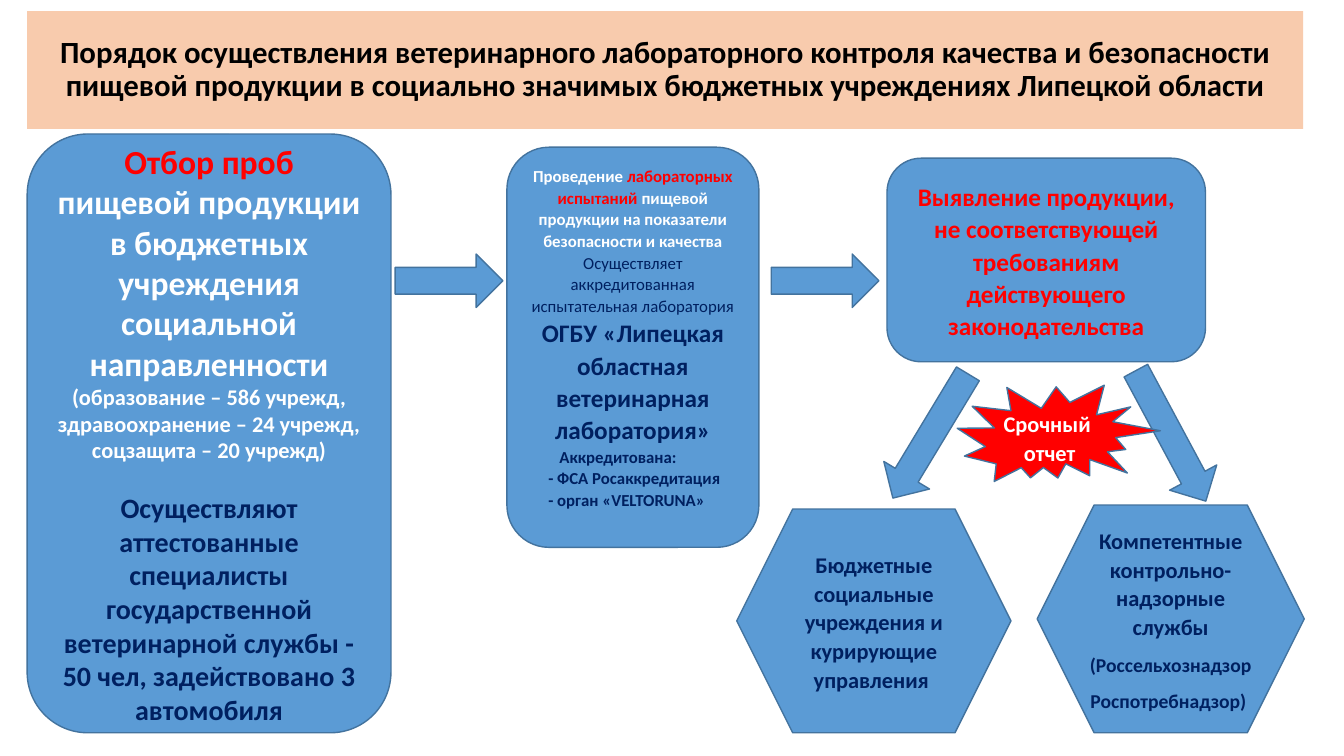
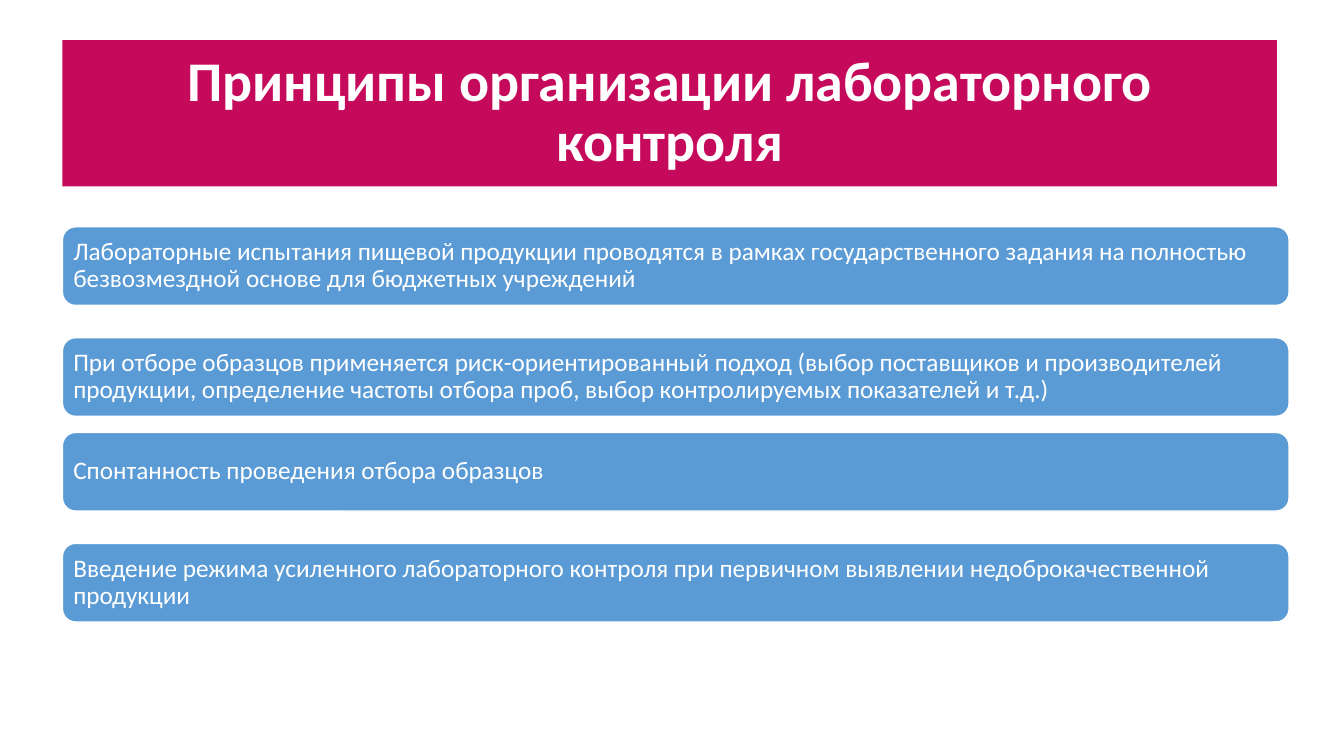
from pptx import Presentation
from pptx.util import Inches, Pt
from pptx.dml.color import RGBColor
from pptx.enum.shapes import MSO_SHAPE
from pptx.enum.text import MSO_ANCHOR, PP_ALIGN

RECT, ROUND = MSO_SHAPE.RECTANGLE, MSO_SHAPE.ROUNDED_RECTANGLE
ARROW, HEX, SEAL = MSO_SHAPE.RIGHT_ARROW, MSO_SHAPE.HEXAGON, MSO_SHAPE.EXPLOSION2
MID, LEFT, CENTER = MSO_ANCHOR.MIDDLE, PP_ALIGN.LEFT, PP_ALIGN.CENTER
BLUE, EDGE, NAVY, RED = "5B9BD5", "43739E", "002060", "FF0000"
WHITE, BLACK, PEACH, PINK = "FFFFFF", "000000", "F8CBAD", "C60A5B"
FONT = "Calibri"
PAGE = (0, 0, 13.33, 7.5)
INSET = (0.1, 0.05, 0.1, 0.05)


def color(code):
    return RGBColor.from_string(code)


def part(box, left, top, width, height):
    x, y, w, h = box
    return (x + w * left / 100, y + h * top / 100, w * width / 100, h * height / 100)


def run(text, size, ink=WHITE, bold=True):
    return text, size, ink, bold


def para(*runs, align=CENTER, line=1.07, before=0, after=0, indent=0):
    return runs, align, line, before, after, indent


def write(frame, paras, inset=INSET, wrap=True):
    frame.word_wrap = wrap
    frame.vertical_anchor = MID
    frame.margin_left, frame.margin_top, frame.margin_right, frame.margin_bottom = map(Inches, inset)
    for i, (runs, align, line, before, after, indent) in enumerate(paras):
        p = frame.paragraphs[0] if i == 0 else frame.add_paragraph()
        p.alignment, p.line_spacing = align, line
        p.space_before, p.space_after = Pt(before), Pt(after)
        if indent:
            p._p.get_or_add_pPr().set("marL", str(Inches(indent)))
        for text, size, ink, bold in runs:
            r = p.add_run()
            r.text = text
            r.font.name, r.font.size, r.font.bold = FONT, Pt(size), bold
            r.font.color.rgb = color(ink)


def draw(slide, kind, box, paras=(), fill=BLUE, edge=EDGE, turn=0, inset=INSET):
    shape = slide.shapes.add_shape(kind, *map(Inches, box))
    shape.shadow.inherit = False
    shape.rotation = turn
    shape.fill.solid()
    shape.fill.fore_color.rgb = color(fill)
    if edge:
        shape.line.color.rgb = color(edge)
        shape.line.width = Pt(1)
    else:
        shape.line.fill.background()
    write(shape.text_frame, paras, inset)


def title(slide, box, text, size, ink, fill):
    draw(slide, RECT, box, [para(run(text, size, ink), line=0.9)], fill, None)


def sample(slide, box):
    draw(slide, ROUND, box, [
        para(run("Отбор проб ", 24, RED),
             run("пищевой продукции в бюджетных учреждения социальной направленности", 24), line=1),
        para(run("(образование – 586 учрежд, здравоохранение – 24 учрежд,", 16), line=1),
        para(run("соцзащита – 20 учрежд)", 16), line=1),
        para(run("Осуществляют аттестованные специалисты государственной ветеринарной "
                 "службы - 50 чел, задействовано 3 автомобиля", 20, NAVY), line=1, before=19.5),
    ])


def trial(slide, box):
    draw(slide, ROUND, box, [
        para(run("Проведение ", 12), run("лабораторных испытаний ", 12, RED),
             run("пищевой продукции на показатели безопасности и качества", 12)),
        para(run("Осуществляет аккредитованная испытательная лаборатория ", 12, NAVY, False),
             run("ОГБУ «Липецкая областная ветеринарная лаборатория»", 18, NAVY)),
        para(run("Аккредитована:", 12, NAVY), align=LEFT, indent=0.3),
        para(run("- ФСА Росаккредитация", 12, NAVY), align=LEFT, indent=0.19),
        para(run("- орган «VELTORUNA»", 12, NAVY), align=LEFT, indent=0.19),
    ], inset=(0.1, 0.05, 0.1, 0.25))


def report(slide, box):
    draw(slide, ROUND, part(box, 26.48, 0, 56.13, 35.43), [
        para(run("Выявление продукции, не соответствующей требованиям действующего "
                 "законодательства", 18, RED), before=10, after=8)])
    draw(slide, ARROW, part(box, 21.32, 43.68, 25.58, 9.3), turn=121.1)
    draw(slide, HEX, part(box, 0, 61.05, 48.32, 38.95), [
        para(run("Бюджетные социальные учреждения и курирующие управления ", 16, NAVY), after=8)])
    draw(slide, HEX, part(box, 52.94, 60.36, 47.06, 39.64), [
        para(run(text, size, NAVY), after=8) for text, size in (
            ("Компетентные контрольно-надзорные службы", 16),
            ("(Россельхознадзор", 14),
            ("Роспотребнадзор) ", 14))])
    draw(slide, ARROW, part(box, 63.43, 43.68, 26.1, 9.3), turn=61.8)
    draw(slide, SEAL, part(box, 38.92, 38.25, 35.34, 19.83), fill=RED, turn=10)
    label = slide.shapes.add_textbox(*map(Inches, part(box, 45.12, 42.63, 20.06, 11.93)))
    write(label.text_frame, [para(run(text, 16)) for text in ("Срочный ", "отчет")], wrap=False)


def rules(slide, box, items):
    for i, text in enumerate(items):
        top = i // 2 * 52.04 + i % 2 * 28.07
        draw(slide, ROUND, part(box, 0, top, 100, 19.9),
             [para(run(text, 18, bold=False), align=LEFT, line=0.9)],
             edge=WHITE, inset=(0.07,) * 4)


def order(slide):
    title(slide, part(PAGE, 2.02, 1.47, 94.95, 15.6),
          "Порядок осуществления ветеринарного лабораторного контроля качества и безопасности "
          "пищевой продукции в социально значимых бюджетных учреждениях Липецкой области",
          22, BLACK, PEACH)
    sample(slide, part(PAGE, 2.02, 17.73, 27.07, 79.2))
    trial(slide, part(PAGE, 37.72, 19.47, 18.75, 52.93))
    for left in (29.4, 57.38):
        draw(slide, ARROW, part(PAGE, left, 33.6, 8.02, 7.07))
    report(slide, part(PAGE, 54.82, 20.93, 42.22, 76))


def basis(slide):
    title(slide, part(PAGE, 4.65, 5.33, 90.37, 19.33),
          "Принципы организации лабораторного контроля", 40, WHITE, PINK)
    rules(slide, part(PAGE, 4.65, 30, 91.27, 52.27), (
        "Лабораторные испытания пищевой продукции проводятся в рамках государственного задания "
        "на полностью безвозмездной основе для бюджетных учреждений",
        "При отборе образцов применяется риск-ориентированный подход (выбор поставщиков и "
        "производителей продукции, определение частоты отбора проб, выбор контролируемых "
        "показателей и т.д.)",
        "Спонтанность проведения отбора образцов",
        "Введение режима усиленного лабораторного контроля при первичном выявлении "
        "недоброкачественной продукции"))


def main():
    deck = Presentation()
    deck.slide_width, deck.slide_height = map(Inches, PAGE[2:])
    for build in (order, basis):
        build(deck.slides.add_slide(deck.slide_layouts[6]))
    deck.save("out.pptx")


if __name__ == "__main__":
    main()
